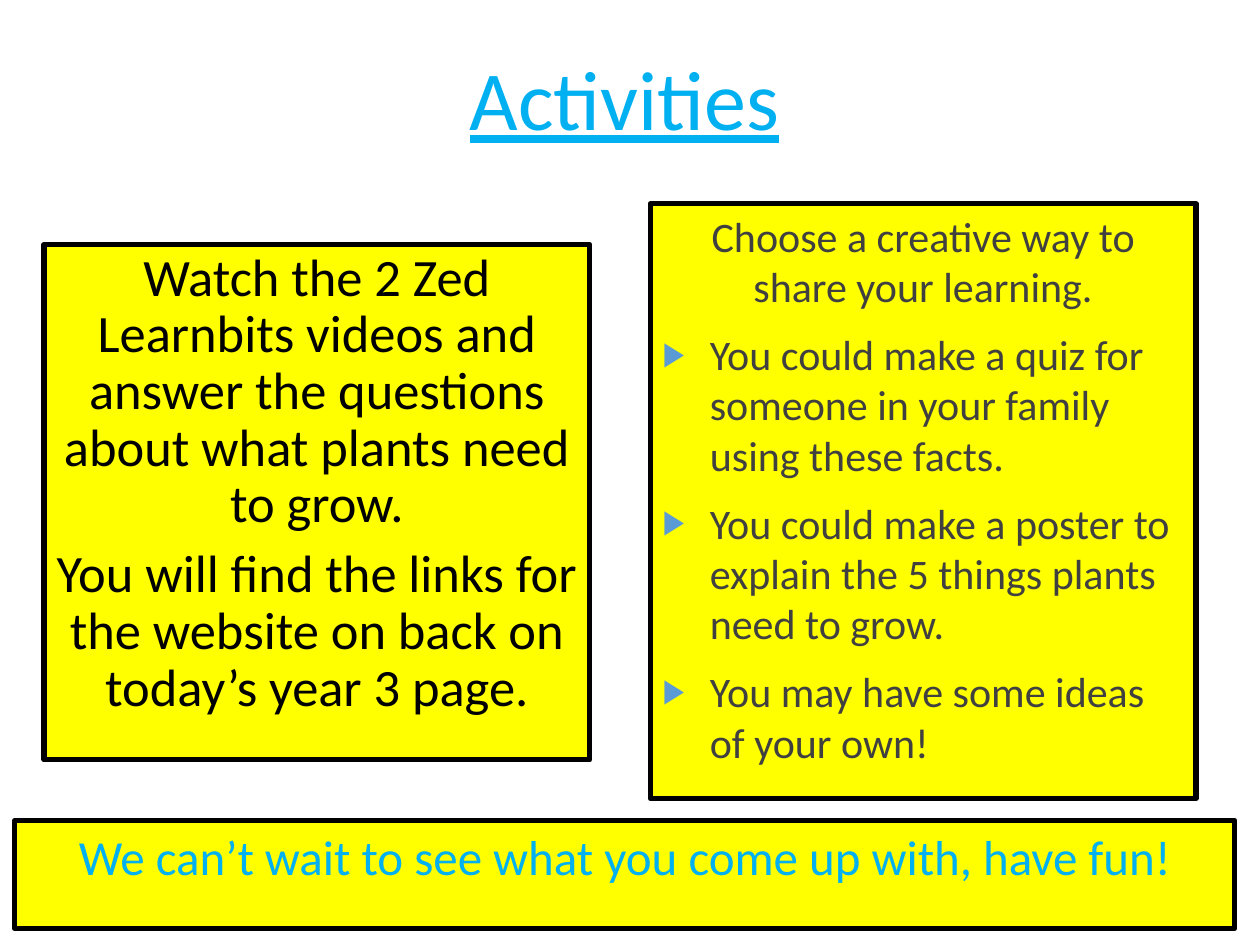
from lxml.etree import SubElement
from pptx import Presentation
from pptx.dml.color import RGBColor
from pptx.enum.shapes import MSO_SHAPE
from pptx.enum.text import MSO_ANCHOR, PP_ALIGN
from pptx.oxml.ns import qn
from pptx.util import Cm, Pt

FONT = "Calibri"
COLORS = {
    "panel": "FFFF00",
    "border": "000000",
    "accent": "00B0F0",
    "task": "000000",
    "idea": "404040",
    "bullet": "5B9BD5",
}


def color(name):
    return RGBColor.from_string(COLORS[name])


def format_run(run, size, color_name):
    run.font.name = FONT
    run.font.size = Pt(size)
    run.font.color.rgb = color(color_name)


def add_bullet(paragraph):
    """Hang the paragraph behind a small triangle."""
    properties = paragraph._p.get_or_add_pPr()
    properties.set("marL", str(Cm(0.95)))
    properties.set("indent", str(-Cm(0.95)))
    bullet_color = SubElement(properties, qn("a:buClr"))
    SubElement(bullet_color, qn("a:srgbClr"), val=COLORS["bullet"])
    SubElement(properties, qn("a:buSzPct"), val="80000")
    SubElement(properties, qn("a:buFont"), typeface="Arial")
    SubElement(properties, qn("a:buChar"), char="▶")


def add_title(slide, text):
    title = slide.shapes.title
    title.left, title.top, title.width, title.height = Cm(3.78), Cm(0.25), Cm(17.63), Cm(3.66)
    frame = title.text_frame
    frame.text = text
    frame.vertical_anchor = MSO_ANCHOR.MIDDLE
    paragraph = frame.paragraphs[0]
    paragraph.alignment = PP_ALIGN.CENTER
    paragraph.line_spacing = 0.9
    format_run(paragraph.runs[0], 48, "accent")
    paragraph.runs[0].font.underline = True


def add_panel(slide, left, top, width, height, lines, size, color_name,
              space_before=10, line_spacing=None, bullets_from=None):
    """Draw a bordered panel; lines from index bullets_from on get bullets."""
    panel = slide.shapes.add_shape(
        MSO_SHAPE.RECTANGLE, Cm(left), Cm(top), Cm(width), Cm(height))
    panel.shadow.inherit = False
    panel.fill.solid()
    panel.fill.fore_color.rgb = color("panel")
    panel.line.color.rgb = color("border")
    panel.line.width = Pt(3)
    frame = panel.text_frame
    frame.word_wrap = True
    frame.vertical_anchor = MSO_ANCHOR.TOP
    frame.text = "\n".join(lines)
    for index, paragraph in enumerate(frame.paragraphs):
        bulleted = bullets_from is not None and index >= bullets_from
        paragraph.alignment = PP_ALIGN.LEFT if bulleted else PP_ALIGN.CENTER
        paragraph.space_before = Pt(space_before)
        if line_spacing:
            paragraph.line_spacing = line_spacing
        if bulleted:
            add_bullet(paragraph)
        format_run(paragraph.runs[0], size, color_name)


def main():
    presentation = Presentation()
    presentation.slide_width, presentation.slide_height = Cm(25.4), Cm(19.05)
    slide = presentation.slides.add_slide(presentation.slide_layouts[5])

    add_title(slide, "Activities")

    # Task to do first
    add_panel(slide, 0.89, 4.93, 11, 10.39, [
        "Watch the 2 Zed Learnbits videos and answer the questions about what plants need to grow.",
        "You will find the links for the website on back on today’s year 3 page.",
    ], 30, "task", space_before=7.5, line_spacing=0.9)

    # Ways to share the learning
    add_panel(slide, 13.11, 4.11, 11, 11.99, [
        "Choose a creative way to share your learning.",
        "You could make a quiz for someone in your family using these facts.",
        "You could make a poster to explain the 5 things plants need to grow.",
        "You may have some ideas of your own!",
    ], 24, "idea", bullets_from=1)

    # Closing message
    add_panel(slide, 0.3, 16.54, 24.59, 2.18,
              ["We can’t wait to see what you come up with, have fun!"], 28, "accent")

    presentation.save("out.pptx")


if __name__ == "__main__":
    main()
